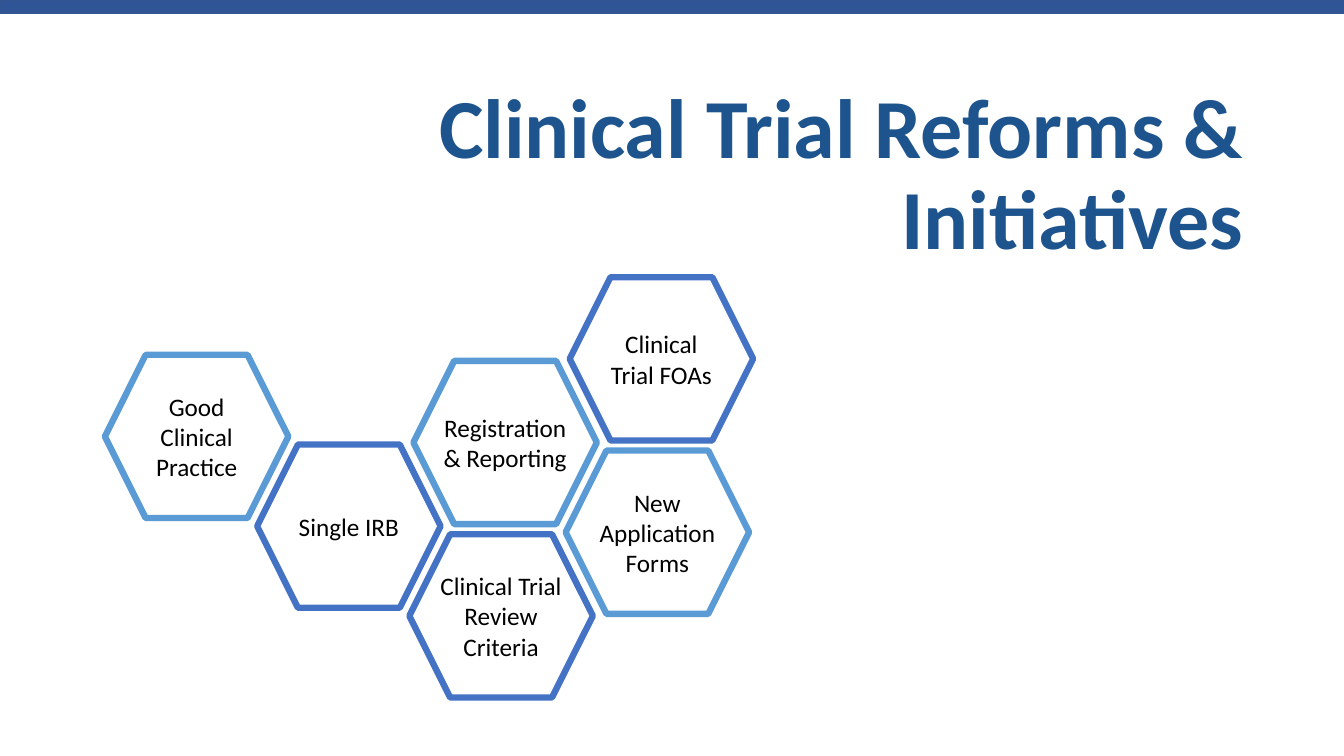
"""Build the clinical trial reforms slide with its honeycomb of initiatives."""
from pptx import Presentation
from pptx.dml.color import RGBColor
from pptx.enum.shapes import MSO_SHAPE
from pptx.enum.text import MSO_ANCHOR, PP_ALIGN
from pptx.util import Inches, Pt

RECTANGLE, HEXAGON = MSO_SHAPE.RECTANGLE, MSO_SHAPE.HEXAGON
MIDDLE, BOTTOM = MSO_ANCHOR.MIDDLE, MSO_ANCHOR.BOTTOM
CENTER, RIGHT = PP_ALIGN.CENTER, PP_ALIGN.RIGHT

WHITE = RGBColor(0xFF, 0xFF, 0xFF)
BLACK = RGBColor(0x00, 0x00, 0x00)
BAR_BLUE = RGBColor(0x2F, 0x55, 0x97)
BAR_EDGE = RGBColor(0x32, 0x54, 0x91)
TITLE_BLUE = RGBColor(0x1E, 0x54, 0x8E)
SKY = RGBColor(0x5B, 0x9B, 0xD5)
ROYAL = RGBColor(0x44, 0x72, 0xC4)

FONT = "Calibri"
SLIDE_W, SLIDE_H = 13.33, 7.5
BAR_H = 0.13
CELL_W, CELL_H = 1.82, 1.62
COMB_LEFT, COMB_TOP = 1.04, 3.52
STEP_DOWN = (1.51, 0.89)
STEP_UP = (0.04, -1.72)

# label, steps down-right, steps up, outline, side inset
INITIATIVES = [
    ("Good Clinical Practice", 0, 0, SKY, 0.1),
    ("Single IRB", 1, 0, ROYAL, 0.1),
    ("New Application Forms", 3, 1, SKY, 0),
    ("Clinical Trial FOAs", 3, 2, ROYAL, 0.1),
    ("Registration & Reporting", 2, 1, SKY, 0),
    ("Clinical Trial Review Criteria", 2, 0, ROYAL, 0),
]


def add_outlined(slide, preset, box, fill, edge, weight):
    """Add a flat preset shape with a solid fill and outline."""
    shape = slide.shapes.add_shape(preset, *map(Inches, box))
    shape.shadow.inherit = False
    shape.fill.solid()
    shape.fill.fore_color.rgb = fill
    shape.line.color.rgb = edge
    shape.line.width = Pt(weight)
    return shape


def write(frame, text, size, color, align, anchor, bold=False):
    """Write one wrapped paragraph and return it."""
    frame.word_wrap = True
    frame.vertical_anchor = anchor
    paragraph = frame.paragraphs[0]
    paragraph.alignment = align
    run = paragraph.add_run()
    run.text = text
    run.font.name = FONT
    run.font.size = Pt(size)
    run.font.bold = bold
    run.font.color.rgb = color
    return paragraph


def add_title(slide, text):
    """Add the right-aligned slide title."""
    title = slide.shapes.add_textbox(
        Inches(1.37), Inches(0.63), Inches(11.06), Inches(2.07))
    heading = write(title.text_frame, text, 60, TITLE_BLUE, RIGHT, BOTTOM, True)
    heading.line_spacing = 0.9


def add_initiative(slide, label, downs, ups, edge, inset):
    """Add one honeycomb cell at its place in the lattice."""
    left = COMB_LEFT + downs * STEP_DOWN[0] + ups * STEP_UP[0]
    top = COMB_TOP + downs * STEP_DOWN[1] + ups * STEP_UP[1]
    cell = add_outlined(slide, HEXAGON, (left, top, CELL_W, CELL_H),
                        WHITE, edge, 4.5)
    frame = cell.text_frame
    frame.margin_left = frame.margin_right = Inches(inset)
    write(frame, label, 18, BLACK, CENTER, MIDDLE)


def main():
    """Build and save the slide."""
    deck = Presentation()
    deck.slide_width, deck.slide_height = Inches(SLIDE_W), Inches(SLIDE_H)
    slide = deck.slides.add_slide(deck.slide_layouts[6])
    add_outlined(slide, RECTANGLE, (0, 0, SLIDE_W, BAR_H), BAR_BLUE, BAR_EDGE, 1)
    add_title(slide, "Clinical Trial Reforms & Initiatives")
    for initiative in INITIATIVES:
        add_initiative(slide, *initiative)
    deck.save("out.pptx")


if __name__ == "__main__":
    main()
